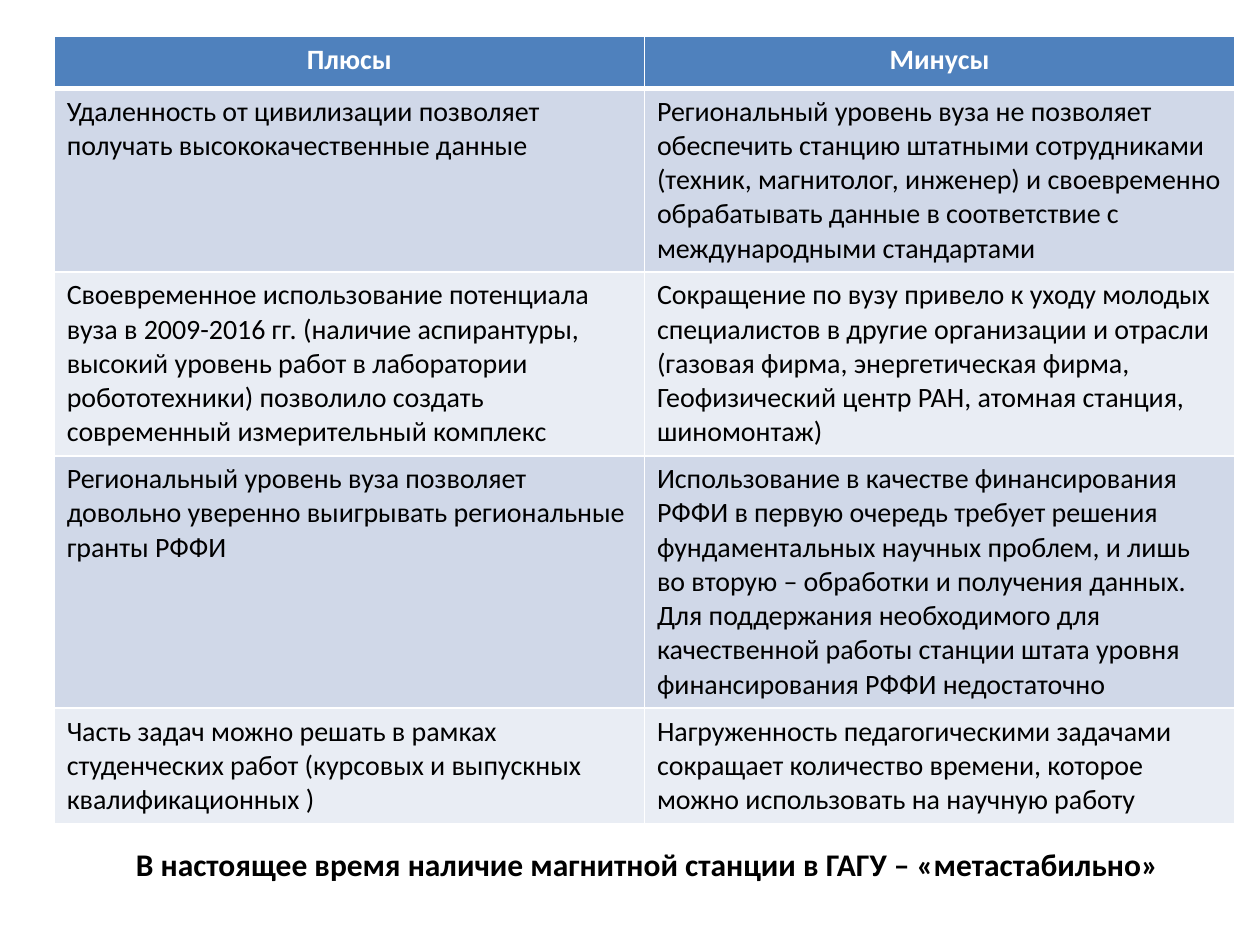
import pptx
import pptx.dml.color
import pptx.enum.text
import pptx.oxml.ns
import pptx.util
from dataclasses import dataclass
from lxml import etree


@dataclass(frozen=True)
class Theme:
    font: str = "Calibri"
    header: str = "4F81BD"
    bands: tuple = ("D0D8E8", "E9EDF4")
    light: str = "FFFFFF"
    dark: str = "000000"
    table_size: int = 16
    summary_size: int = 18
    thin: int = 1
    thick: int = 3


THEME = Theme()
COLUMNS, ROWS = 100, 75
HEADINGS = ("Плюсы", "Минусы")
COMPARISON = (
    (
        "Удаленность от цивилизации позволяет получать высококачественные данные",
        "Региональный уровень вуза не позволяет обеспечить станцию штатными сотрудниками "
        "(техник, магнитолог, инженер) и своевременно обрабатывать данные в соответствие "
        "с международными стандартами",
    ),
    (
        "Своевременное использование потенциала вуза в 2009-2016 гг. (наличие аспирантуры, "
        "высокий уровень работ в лаборатории робототехники) позволило создать современный "
        "измерительный комплекс",
        "Сокращение по вузу привело к уходу молодых специалистов в другие организации и отрасли "
        "(газовая фирма, энергетическая фирма, Геофизический центр РАН, атомная станция, шиномонтаж)",
    ),
    (
        "Региональный уровень вуза позволяет довольно уверенно выигрывать региональные гранты РФФИ",
        "Использование в качестве финансирования РФФИ в первую очередь требует решения "
        "фундаментальных научных проблем, и лишь во вторую – обработки и получения данных. "
        "Для поддержания необходимого для качественной работы станции штата уровня "
        "финансирования РФФИ недостаточно",
    ),
    (
        "Часть задач можно решать в рамках студенческих работ (курсовых и выпускных квалификационных )",
        "Нагруженность педагогическими задачами сокращает количество времени, которое можно "
        "использовать на научную работу",
    ),
)
SUMMARY = "В настоящее время наличие магнитной станции в ГАГУ – «метастабильно»"


def write_text(frame, text, *, size, color, bold=False, align=pptx.enum.text.PP_ALIGN.LEFT):
    para = frame.paragraphs[0]
    para.alignment = align
    span = para.add_run()
    span.text = text
    span.font.name = THEME.font
    span.font.size = pptx.util.Pt(size)
    span.font.bold = bold
    span.font.color.rgb = pptx.dml.color.RGBColor.from_string(color)


class Page:
    def __init__(self, deck, theme):
        self.theme = theme
        self.slide = deck.slides.add_slide(deck.slide_layouts[6])
        self.column = deck.slide_width / COLUMNS
        self.row = deck.slide_height / ROWS

    def place(self, left, top, width, height):
        return (
            round(left * self.column),
            round(top * self.row),
            round(width * self.column),
            round(height * self.row),
        )

    def border(self, cell, **widths):
        properties = cell._tc.get_or_add_tcPr()
        for position, (side, width) in enumerate(widths.items()):
            line = etree.Element(pptx.oxml.ns.qn(f"a:{side}"), w=str(pptx.util.Pt(width)))
            fill = etree.SubElement(line, pptx.oxml.ns.qn("a:solidFill"))
            etree.SubElement(fill, pptx.oxml.ns.qn("a:srgbClr"), val=self.theme.light)
            properties.insert(position, line)

    def cell(self, cell, text, fill, bottom, **style):
        cell.fill.solid()
        cell.fill.fore_color.rgb = pptx.dml.color.RGBColor.from_string(fill)
        thin = self.theme.thin
        self.border(cell, lnL=thin, lnR=thin, lnT=thin, lnB=bottom)
        write_text(cell.text_frame, text, size=self.theme.table_size, **style)

    def table(self, headings, records, area, row_height):
        theme = self.theme
        place = self.place(*area)
        frame = self.slide.shapes.add_table(len(records) + 1, len(headings), *place)
        table = frame.table
        for row in table.rows:
            row.height = round(row_height * self.row)
        frame.height = place[3]
        for index, heading in enumerate(headings):
            self.cell(table.cell(0, index), heading, theme.header, theme.thick, color=theme.light,
                      bold=True, align=pptx.enum.text.PP_ALIGN.CENTER)
        for number, record in enumerate(records, 1):
            band = theme.bands[(number - 1) % len(theme.bands)]
            top = theme.thick if number == 1 else theme.thin
            for index, text in enumerate(record):
                cell = table.cell(number, index)
                self.cell(cell, text, band, theme.thin, color=theme.dark)
                cell._tc.tcPr.find(pptx.oxml.ns.qn("a:lnT")).set("w", str(pptx.util.Pt(top)))

    def summary(self, text, area):
        box = self.slide.shapes.add_textbox(*self.place(*area))
        box.text_frame.word_wrap = False
        box.text_frame.auto_size = pptx.enum.text.MSO_AUTO_SIZE.SHAPE_TO_FIT_TEXT
        write_text(box.text_frame, text, size=self.theme.summary_size,
                   color=self.theme.dark, bold=True)


def main():
    deck = pptx.Presentation()
    deck.slide_width = pptx.util.Inches(10)
    deck.slide_height = pptx.util.Inches(7.5)
    page = Page(deck, THEME)
    page.table(HEADINGS, COMPARISON, area=(4.3, 2.9, 93.7, 61.4), row_height=4.1)
    page.summary(SUMMARY, area=(9.8, 66.6, 84.1, 4))
    deck.save("out.pptx")


if __name__ == "__main__":
    main()
